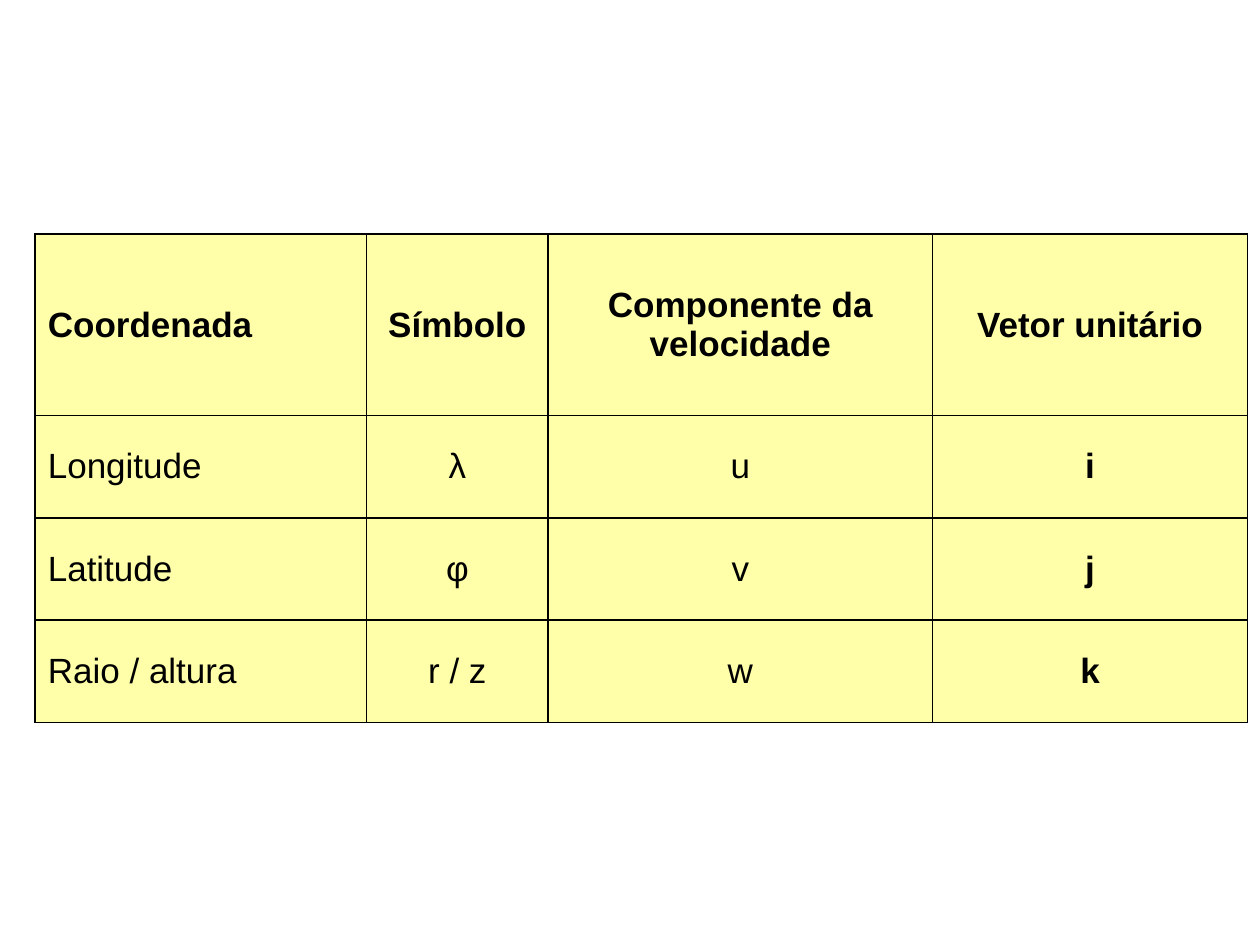
from dataclasses import dataclass

from lxml.etree import SubElement
from pptx import Presentation
from pptx.dml.color import RGBColor
from pptx.enum.text import MSO_ANCHOR, PP_ALIGN
from pptx.oxml.ns import qn
from pptx.util import Cm, Pt


@dataclass(frozen=True)
class Theme:
    """Colours and type of the slide."""
    font: str = "Arial"
    size: int = 20
    ink: str = "000000"
    fill: str = "FFFFAA"
    line: int = 1


THEME = Theme()
ROWS = [
    ("Coordenada", "Símbolo", "Componente da velocidade", "Vetor unitário"),
    ("Longitude", "λ", "u", "i"),
    ("Latitude", "φ", "v", "j"),
    ("Raio / altura", "r / z", "w", "k"),
]
WIDTHS = [6.68, 3.66, 7.75, 6.35]
HEIGHTS = [3.66] + [2.06] * 3


def add_edges(cell):
    """Draw a thin line on all four sides of a cell."""
    props = cell._tc.get_or_add_tcPr()
    for side in ("a:lnL", "a:lnR", "a:lnT", "a:lnB"):
        line = SubElement(props, qn(side), w=str(Pt(THEME.line)))
        paint = SubElement(line, qn("a:solidFill"))
        SubElement(paint, qn("a:srgbClr"), val=THEME.ink)


def fill_cell(cell, text, align, bold):
    """Style a cell and write its text."""
    add_edges(cell)
    cell.fill.solid()
    cell.fill.fore_color.rgb = RGBColor.from_string(THEME.fill)
    cell.vertical_anchor = MSO_ANCHOR.MIDDLE
    para = cell.text_frame.paragraphs[0]
    para.alignment = align
    run = para.add_run()
    run.text = text
    font = run.font
    font.name, font.size, font.bold = THEME.font, Pt(THEME.size), bold
    font.color.rgb = RGBColor.from_string(THEME.ink)


def add_grid(slide):
    """Add the table of coordinates, symbols and unit vectors."""
    frame = slide.shapes.add_table(
        len(ROWS), len(WIDTHS), Cm(0.71), Cm(4.72),
        Cm(sum(WIDTHS)), Cm(sum(HEIGHTS)))
    table = frame.table
    for col, width in zip(table.columns, WIDTHS):
        col.width = Cm(width)
    for row, height in zip(table.rows, HEIGHTS):
        row.height = Cm(height)
    last = len(WIDTHS) - 1
    for r, texts in enumerate(ROWS):
        for c, text in enumerate(texts):
            align = PP_ALIGN.CENTER if c else PP_ALIGN.LEFT
            fill_cell(table.cell(r, c), text, align, r == 0 or c == last)


def main():
    """Build and save the slide."""
    deck = Presentation()
    deck.slide_width, deck.slide_height = Cm(25.4), Cm(19.05)
    slide = deck.slides.add_slide(deck.slide_layouts[6])
    add_grid(slide)
    deck.save("out.pptx")


if __name__ == "__main__":
    main()
